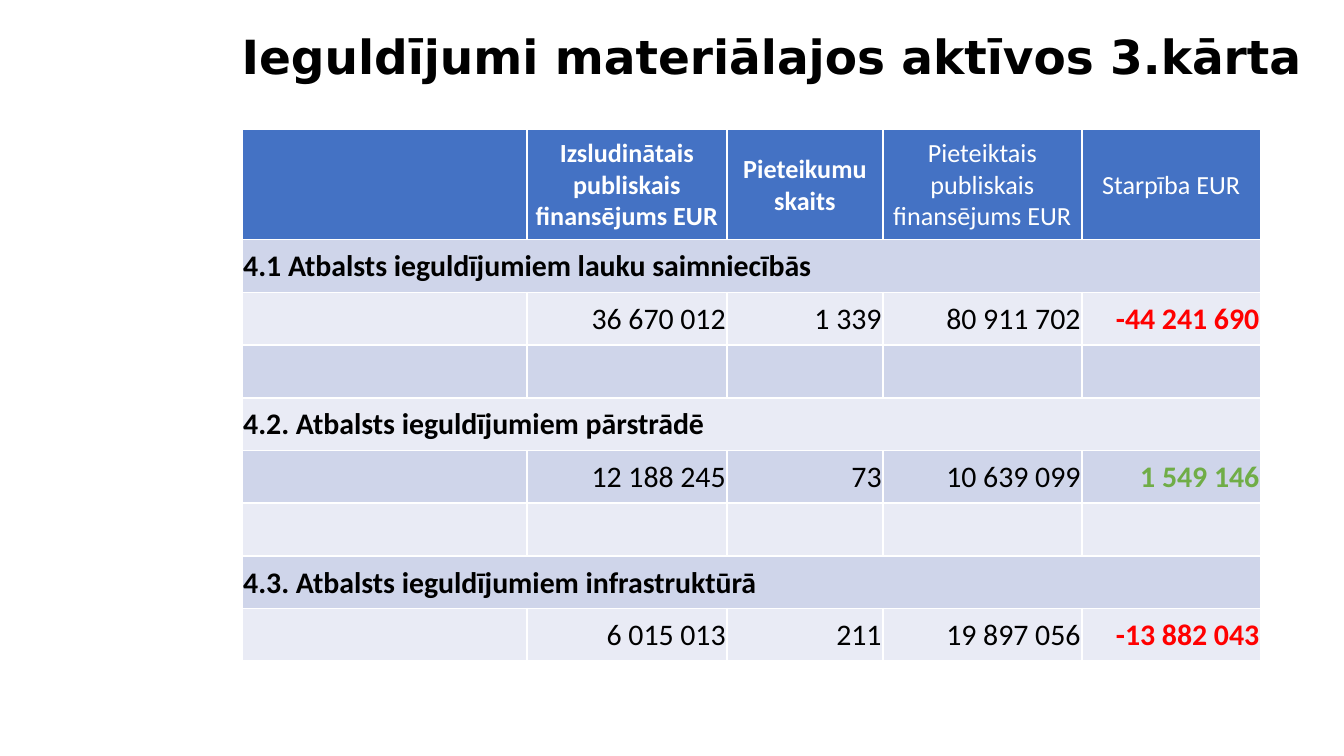
import pptx
import pptx.util
import pptx.dml.color
import pptx.enum.text

Pt = pptx.util.Pt
RGBColor = pptx.dml.color.RGBColor
ALIGN = pptx.enum.text.PP_ALIGN
MIDDLE = pptx.enum.text.MSO_ANCHOR.MIDDLE

BLACK = RGBColor(0x00, 0x00, 0x00)
WHITE = RGBColor(0xFF, 0xFF, 0xFF)
BLUE = RGBColor(0x44, 0x72, 0xC4)
BAND_DARK = RGBColor(0xCF, 0xD5, 0xEA)
BAND_LIGHT = RGBColor(0xE9, 0xEB, 0xF5)
RED = RGBColor(0xFF, 0x00, 0x00)
GREEN = RGBColor(0x70, 0xAD, 0x47)

TITLE = "Ieguldījumi materiālajos aktīvos 3.kārta"
HEADERS = [
    "",
    "Izsludinātais publiskais finansējums EUR",
    "Pieteikumu skaits",
    "Pieteiktais publiskais finansējums EUR",
    "Starpība EUR",
]
BOLD_HEADERS = HEADERS[1:3]
# A row with one entry is a section heading across the table
ROWS = [
    ["4.1 Atbalsts ieguldījumiem lauku saimniecībās"],
    ["", "36 670 012", "1 339", "80 911 702", "-44 241 690"],
    [""] * 5,
    ["4.2. Atbalsts ieguldījumiem pārstrādē"],
    ["", "12 188 245", "73", "10 639 099", "1 549 146"],
    [""] * 5,
    ["4.3. Atbalsts ieguldījumiem infrastruktūrā"],
    ["", "6 015 013", "211", "19 897 056", "-13 882 043"],
]
COL_WIDTHS = [152.6, 107.3, 83.5, 106.6, 95.8]
HEADER_H, ROW_H = 59, 28.25


def style_run(p, font, size, color, bold):
    for r in p.runs:
        r.font.name = font
        r.font.size = Pt(size)
        r.font.color.rgb = color
        r.font.bold = bold


def fill_cell(cell, text, fill, align, size, color, bold):
    cell.fill.solid()
    cell.fill.fore_color.rgb = fill
    cell.vertical_anchor = MIDDLE
    cell.margin_left = cell.margin_right = cell.margin_top = Pt(0.7)
    cell.margin_bottom = 0
    p = cell.text_frame.paragraphs[0]
    p.text = text
    p.alignment = align
    style_run(p, "Calibri", size, color, bold)


prs = pptx.Presentation()
prs.slide_width, prs.slide_height = Pt(720), Pt(405)
s = prs.slides.add_slide(prs.slide_layouts[5])

title = s.shapes.title
title.left, title.top, title.width, title.height = Pt(124), Pt(0), Pt(586), Pt(63)
tf = title.text_frame
tf.text = TITLE
tf.auto_size = pptx.enum.text.MSO_AUTO_SIZE.NONE
tf.vertical_anchor = MIDDLE
tf.margin_left = tf.margin_right = Pt(5.4)
tf.margin_top = tf.margin_bottom = Pt(2.7)
p = tf.paragraphs[0]
p.alignment = ALIGN.LEFT
p.line_spacing = 0.9
style_run(p, "DejaVu Sans", 25.2, BLACK, True)

table = s.shapes.add_table(
    len(ROWS) + 1, len(HEADERS), Pt(129.6), Pt(69.4),
    Pt(sum(COL_WIDTHS)), Pt(HEADER_H + ROW_H * len(ROWS))).table
for column, width in zip(table.columns, COL_WIDTHS):
    column.width = Pt(width)
for i, row in enumerate(table.rows):
    row.height = Pt(ROW_H if i else HEADER_H)

for j, text in enumerate(HEADERS):
    fill_cell(table.cell(0, j), text, BLUE, ALIGN.CENTER, 14, WHITE, text in BOLD_HEADERS)

last = len(HEADERS) - 1
for i, values in enumerate(ROWS, 1):
    band = BAND_DARK if i % 2 else BAND_LIGHT
    if len(values) == 1:
        table.cell(i, 0).merge(table.cell(i, last))
        fill_cell(table.cell(i, 0), values[0], band, ALIGN.LEFT, 16, BLACK, True)
        continue
    for j, text in enumerate(values):
        color = BLACK
        if j == last:
            color = RED if text.startswith("-") else GREEN
        fill_cell(table.cell(i, j), text, band, ALIGN.RIGHT, 16, color, j == last)

prs.save("out.pptx")
